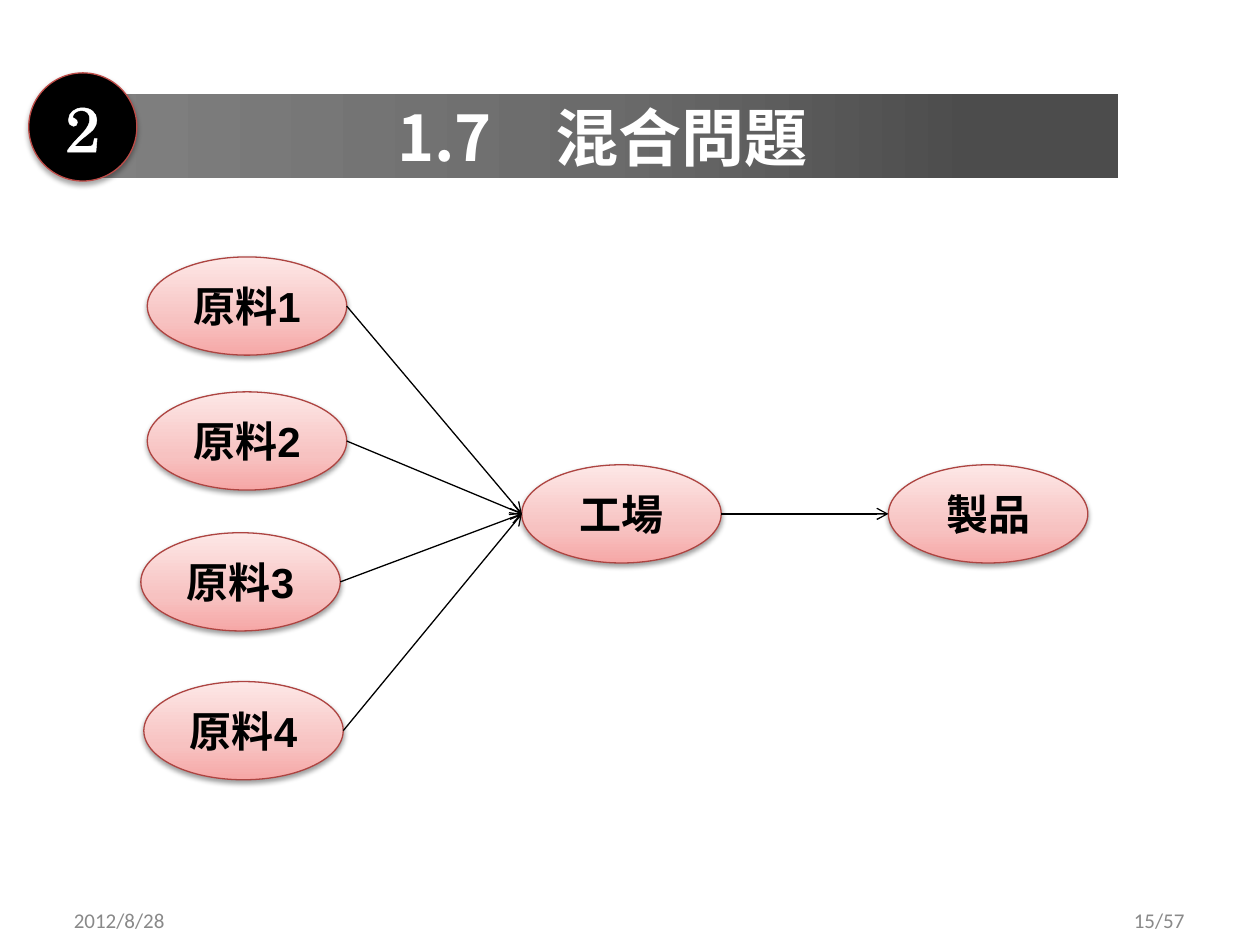
from lxml import etree
from pptx import Presentation
from pptx import util as u
from pptx.dml.color import RGBColor
from pptx.enum import shapes, text
from pptx.oxml import ns

WHITE = RGBColor(0xFF, 0xFF, 0xFF)
BLACK = RGBColor(0x00, 0x00, 0x00)
GRAY = RGBColor(0x89, 0x89, 0x89)
BADGE_LINE = RGBColor(0xBF, 0x4C, 0x48)
NODE_LINE = RGBColor(0xAD, 0x44, 0x41)
BAR_STOPS = [
    (14, RGBColor(0x4C, 0x4C, 0x4C)),
    (50, RGBColor(0x6B, 0x6B, 0x6B)),
    (100, RGBColor(0x80, 0x80, 0x80)),
]
NODE_STOPS = [
    (0, RGBColor(0xF6, 0xA7, 0xA6)),
    (35, RGBColor(0xF7, 0xC2, 0xC1)),
    (100, RGBColor(0xFD, 0xE7, 0xE6)),
]
CJK_FONT = "Noto Sans CJK JP"
NODE_WIDTH, NODE_HEIGHT = 4.02, 1.98
MATERIALS = [
    ("原料1", 2.97, 5.18),
    ("原料2", 2.97, 7.9),
    ("原料3", 2.84, 10.74),
    ("原料4", 2.9, 13.74),
]
FACTORY = ("工場", 10.52, 9.37)
PRODUCT = ("製品", 17.91, 9.37)


def add_child(parent, tag, **attributes):
    child = etree.SubElement(parent, ns.qn(tag))
    for name, value in attributes.items():
        child.set(name, str(value))
    return child


def set_gradient(shape, stops, angle):
    shape.fill.gradient()
    gradient = shape._element.spPr.find(ns.qn("a:gradFill"))
    stop_list = gradient.find(ns.qn("a:gsLst"))
    for old_stop in list(stop_list):
        stop_list.remove(old_stop)
    for position, color in stops:
        stop = add_child(stop_list, "a:gs", pos=position * 1000)
        add_child(stop, "a:srgbClr", val=color)
    gradient.find(ns.qn("a:lin")).set("ang", str(angle * 60000))


def set_line(shape, color, width):
    shape.line.color.rgb = color
    shape.line.width = u.Pt(width)


def set_shadow(shape, opacity, distance):
    shape.shadow.inherit = False
    effects = shape._element.spPr.find(ns.qn("a:effectLst"))
    shadow = add_child(effects, "a:outerShdw", blurRad=u.Pt(3.1),
                       dist=u.Pt(distance), dir=90 * 60000, rotWithShape=0)
    color = add_child(shadow, "a:srgbClr", val=BLACK)
    add_child(color, "a:alpha", val=opacity * 1000)


def write_text(shape, words, size, font, color, bold=False,
               alignment=text.PP_ALIGN.CENTER):
    frame = shape.text_frame
    frame.word_wrap = True
    frame.auto_size = text.MSO_AUTO_SIZE.NONE
    frame.vertical_anchor = text.MSO_ANCHOR.MIDDLE
    paragraph = frame.paragraphs[0]
    paragraph.alignment = alignment
    run = paragraph.add_run()
    run.text = words
    run.font.size = u.Pt(size)
    run.font.bold = bold
    run.font.color.rgb = color
    run.font.name = font
    add_child(run._r.get_or_add_rPr(), "a:ea", typeface=CJK_FONT)
    return run


def add_title(slide, words):
    title = slide.shapes.title
    title.left, title.top = u.Cm(1.7), u.Cm(1.85)
    title.width, title.height = u.Cm(20.88), u.Cm(1.78)
    set_gradient(title, BAR_STOPS, 180)
    set_line(title, WHITE, 2)
    write_text(title, words, 36, CJK_FONT, WHITE, bold=True)


def add_ellipse(container, left, top, width, height):
    return container.shapes.add_shape(
        shapes.MSO_SHAPE.OVAL, u.Cm(left), u.Cm(top), u.Cm(width), u.Cm(height))


def add_badge(slide, words):
    badge = add_ellipse(slide, 0.58, 1.47, 2.18, 2.18)
    badge.fill.solid()
    badge.fill.fore_color.rgb = BLACK
    set_line(badge, BADGE_LINE, 0.75)
    set_shadow(badge, 35, 1.8)
    run = write_text(badge, words, 36, "TeX Gyre Schola", WHITE)
    properties = run._r.get_or_add_rPr()
    outline = add_child(properties, "a:ln", w=u.Pt(1.45))
    add_child(add_child(outline, "a:solidFill"), "a:srgbClr", val=WHITE)
    properties.insert(0, outline)


def add_node(group, words, left, top):
    node = add_ellipse(group, left, top, NODE_WIDTH, NODE_HEIGHT)
    set_gradient(node, NODE_STOPS, 270)
    set_line(node, NODE_LINE, 0.75)
    set_shadow(node, 38, 1.6)
    write_text(node, words, 24, "Arial", BLACK, bold=True)
    return node


def add_arrow(group, source, target):
    arrow = group.shapes.add_connector(
        shapes.MSO_CONNECTOR.STRAIGHT,
        source.left + source.width, source.top + source.height // 2,
        target.left, target.top + target.height // 2)
    set_line(arrow, BLACK, 0.75)
    add_child(arrow.line._get_or_add_ln(), "a:tailEnd", type="arrow")
    add_child(arrow._element.spPr, "a:effectLst")


def add_footer(slide, words, left, alignment):
    box = slide.shapes.add_textbox(u.Cm(left), u.Cm(18.03), u.Cm(5.92), u.Cm(1.02))
    write_text(box, words, 12, "Calibri", GRAY, alignment=alignment)


def add_flow(slide):
    group = slide.shapes.add_group_shape()
    materials = [add_node(group, *material) for material in MATERIALS]
    factory = add_node(group, *FACTORY)
    product = add_node(group, *PRODUCT)
    for material in materials:
        add_arrow(group, material, factory)
    add_arrow(group, factory, product)


def main():
    presentation = Presentation()
    presentation.slide_width = u.Cm(25.4)
    presentation.slide_height = u.Cm(19.05)
    slide = presentation.slides.add_slide(presentation.slide_layouts[5])
    add_title(slide, "1.7　混合問題")
    add_badge(slide, "2")
    add_flow(slide)
    add_footer(slide, "2012/8/28", 1.24, text.PP_ALIGN.LEFT)
    add_footer(slide, "15/57", 18.21, text.PP_ALIGN.RIGHT)
    presentation.save("out.pptx")


if __name__ == "__main__":
    main()
